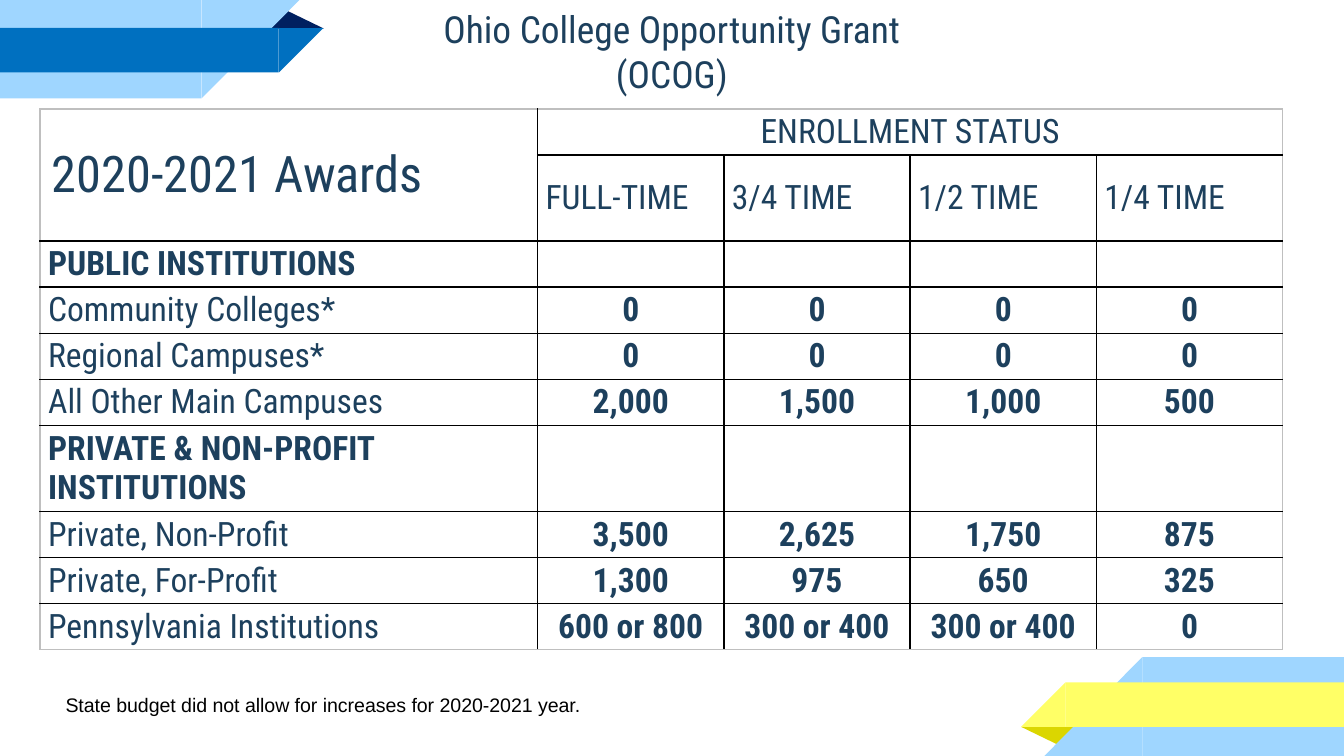
"""Build the Ohio College Opportunity Grant awards slide."""
from lxml import etree
from pptx import Presentation
from pptx.dml.color import RGBColor
from pptx.enum import shapes, text
from pptx.oxml.ns import qn
from pptx.util import Cm, Pt

NAVY = RGBColor(0x1D, 0x40, 0x5D)
BLACK = RGBColor(0, 0, 0)
GRAY = RGBColor(0xBF, 0xBF, 0xBF)
WHITE = RGBColor(0xFF, 0xFF, 0xFF)
SKY = RGBColor(0x9F, 0xD6, 0xFF)
BLUE = RGBColor(0, 0x70, 0xC0)
DARK_BLUE = RGBColor(0, 0x20, 0x60)
YELLOW = RGBColor(0xFF, 0xFF, 0x66)
OLIVE = RGBColor(0xDB, 0xD6, 0)
HEAD_FONT, NOTE_FONT = "Roboto Condensed", "Arial"
LEFT, CENTER = text.PP_ALIGN.LEFT, text.PP_ALIGN.CENTER

TITLE = "Ohio College Opportunity Grant (OCOG)"
NOTE = "State budget did not allow for increases for 2020-2021 year."
AWARDS = [
    ["2020-2021 Awards", "ENROLLMENT STATUS", "", "", ""],
    ["", "FULL-TIME", "3/4 TIME", "1/2 TIME", "1/4 TIME"],
    ["PUBLIC INSTITUTIONS", "", "", "", ""],
    ["Community Colleges*", "0", "0", "0", "0"],
    ["Regional Campuses*", "0", "0", "0", "0"],
    ["All Other Main Campuses", "2,000", "1,500", "1,000", "500"],
    ["PRIVATE & NON-PROFIT INSTITUTIONS", "", "", "", ""],
    ["Private, Non-Profit", "3,500", "2,625", "1,750", "875"],
    ["Private, For-Profit", "1,300", "975", "650", "325"],
    ["Pennsylvania Institutions", "600 or 800", "300 or 400", "300 or 400", "0"],
]
COL_WIDTHS = [9.4] + [3.52] * 4
TALL_ROWS = (1, 6)
SECTION_ROWS = (2, 6)

RECT = shapes.MSO_SHAPE.RECTANGLE
CORNER = shapes.MSO_SHAPE.RIGHT_TRIANGLE
FOLD = shapes.MSO_SHAPE.ISOSCELES_TRIANGLE
RIBBONS = [
    (FOLD, 19.3, 13.74, 1.09, 0.36, OLIVE, 180, False),
    (RECT, 21.59, 12.42, 3.81, 1.87, SKY, 0, False),
    (CORNER, 19.74, 12.42, 1.85, 1.87, SKY, 0, True),
    (RECT, 20.14, 12.9, 5.26, 0.84, YELLOW, 0, False),
    (CORNER, 19.3, 12.9, 0.84, 0.84, YELLOW, 0, True),
    (FOLD, 5.03, 0.18, 1.09, 0.36, DARK_BLUE, 0, False),
    (RECT, 0, 0, 3.81, 1.86, SKY, 0, False),
    (CORNER, 3.81, 0, 1.85, 1.86, SKY, 180, True),
    (RECT, 0, 0.53, 5.27, 0.84, BLUE, 0, False),
    (CORNER, 5.27, 0.53, 0.84, 0.84, BLUE, 180, True),
]


def write(tf, words, size, font, color, align=LEFT, bold=False):
    tf.text = words
    p = tf.paragraphs[0]
    p.alignment = align
    for r in p.runs:
        r.font.size, r.font.name, r.font.bold = Pt(size), font, bold
        r.font.color.rgb = color


def add_ribbon(s, kind, x, y, w, h, color, turn, flip):
    sp = s.shapes.add_shape(kind, Cm(x), Cm(y), Cm(w), Cm(h))
    sp.shadow.inherit = False
    sp.fill.solid()
    sp.fill.fore_color.rgb = color
    sp.line.fill.background()
    sp.rotation = turn
    if kind == FOLD:
        sp.adjustments[0] = 0.32
    if flip:
        sp.element.spPr.find(qn("a:xfrm")).set("flipH", "1")


def add_text(s, x, y, w, h, anchor, *style):
    tf = s.shapes.add_textbox(Cm(x), Cm(y), Cm(w), Cm(h)).text_frame
    tf.word_wrap = True
    tf.vertical_anchor = anchor
    write(tf, *style)


def set_borders(cell, colors):
    tc_pr = cell._tc.get_or_add_tcPr()
    for i, (side, color) in enumerate(zip("LRTB", colors)):
        ln = etree.Element(qn(f"a:ln{side}"), w=str(Pt(1)))
        fill = etree.SubElement(ln, qn("a:solidFill"))
        etree.SubElement(fill, qn("a:srgbClr"), val=str(color))
        tc_pr.insert(i, ln)


def add_awards(s):
    n_rows, n_cols = len(AWARDS), len(COL_WIDTHS)
    heights = [1.63 if i in TALL_ROWS else 0.87 for i in range(n_rows)]
    table = s.shapes.add_table(n_rows, n_cols, Cm(0.76), Cm(2.06),
                               Cm(sum(COL_WIDTHS)), Cm(sum(heights))).table
    table.first_row = table.horz_banding = False
    for col, width in zip(table.columns, COL_WIDTHS):
        col.width = Cm(width)
    for row, height in zip(table.rows, heights):
        row.height = Cm(height)
    table.cell(0, 0).merge(table.cell(1, 0))
    table.cell(0, 1).merge(table.cell(0, n_cols - 1))
    for i, row in enumerate(AWARDS):
        for j, words in enumerate(row):
            cell = table.cell(i, j)
            if cell.is_spanned:
                continue
            corner = i == j == 0
            cell.margin_left = Cm(0.22 if corner else 0.15)
            cell.margin_right = Cm(0.15)
            cell.margin_top = cell.margin_bottom = Cm(0.04)
            cell.vertical_anchor = text.MSO_ANCHOR.MIDDLE
            cell.fill.solid()
            cell.fill.fore_color.rgb = WHITE
            centered = j > 0 and i != 1
            bold = i in SECTION_ROWS or (j > 0 and i > 1)
            write(cell.text_frame, words, 27 if corner else 18, HEAD_FONT,
                  NAVY, CENTER if centered else LEFT, bold)
            last_col = j + cell.span_width == n_cols
            edges = (j == 0, last_col, i == 0, i == n_rows - 1)
            set_borders(cell, [GRAY if edge else BLACK for edge in edges])


def main():
    prs = Presentation()
    prs.slide_width, prs.slide_height = Cm(25.4), Cm(14.29)
    s = prs.slides.add_slide(prs.slide_layouts[6])
    for ribbon in RIBBONS:
        add_ribbon(s, *ribbon)
    add_text(s, 7.09, 0.08, 11.22, 1.78, text.MSO_ANCHOR.MIDDLE,
             TITLE, 20, HEAD_FONT, NAVY, CENTER)
    add_awards(s)
    add_text(s, 0.99, 12.98, 15.29, 0.71, text.MSO_ANCHOR.TOP,
             NOTE, 10.5, NOTE_FONT, BLACK)
    prs.save("out.pptx")


if __name__ == "__main__":
    main()
